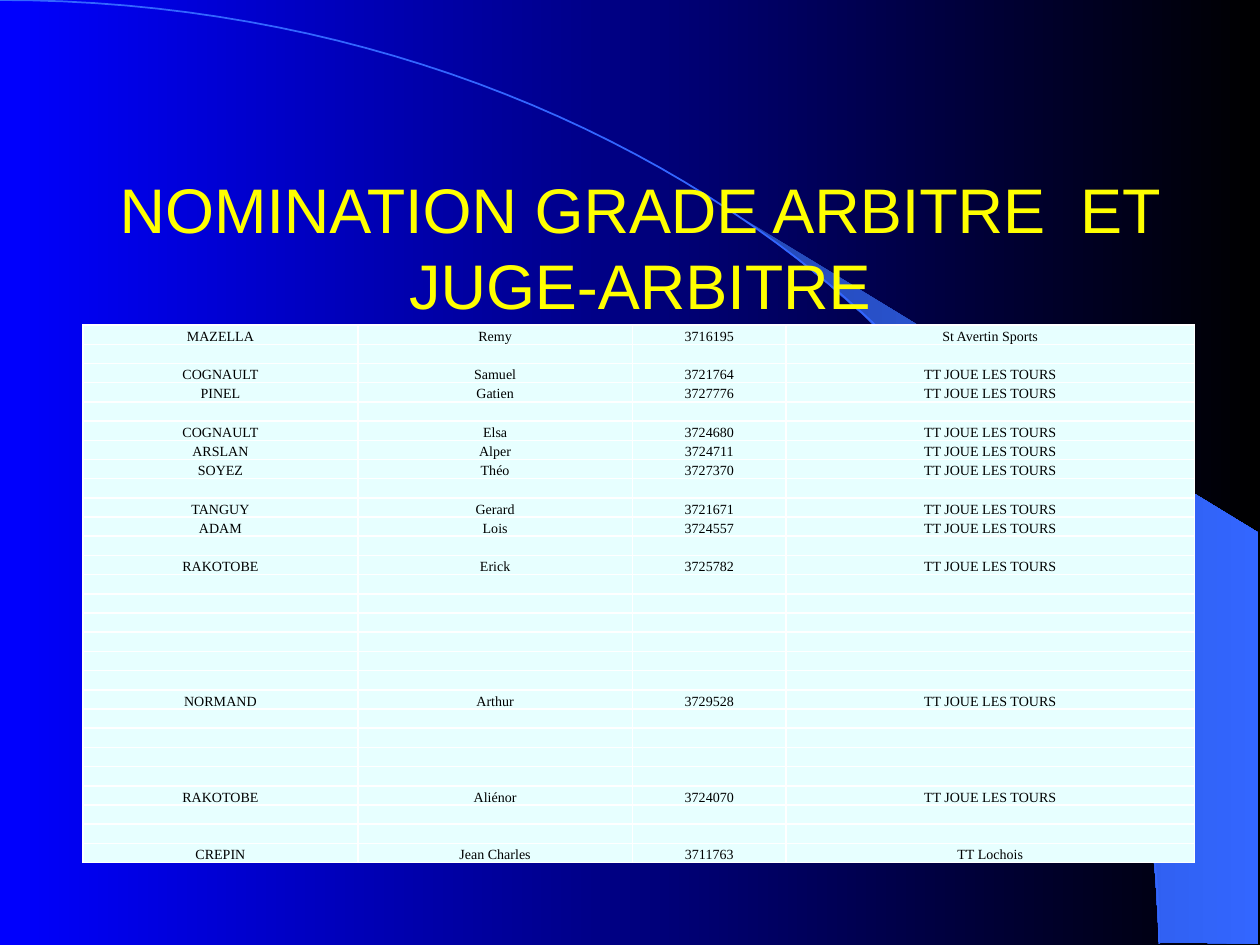
from lxml.etree import SubElement
from pptx import Presentation
from pptx.dml.color import RGBColor
from pptx.enum.text import MSO_ANCHOR as Anchor, MSO_AUTO_SIZE as AutoSize, PP_ALIGN as Align
from pptx.oxml.ns import qn
from pptx.util import Inches, Pt


def rgb(color):
    return RGBColor.from_string(color)


def write(tf, text, size, font, color):
    p = tf.paragraphs[0]
    p.alignment = Align.CENTER
    # Empty cells take the size too, so their rows stay low
    p.font.size = Pt(size)
    if text:
        r = p.add_run()
        r.text = text
        r.font.size, r.font.name = Pt(size), font
        r.font.color.rgb = rgb(color)


prs = Presentation()
prs.slide_width, prs.slide_height = Inches(10), Inches(7.5)
s = prs.slides.add_slide(prs.slide_layouts[5])

# Background and beam, both with a left-to-right gradient
beam_points = [
    (9.2, 7.48), (9.99, 7.49), (9.99, 4.23), (5.89, 1.73), (6.24, 1.99), (6.53, 2.22),
    (6.85, 2.5), (7.16, 2.8), (7.62, 3.3), (8.03, 3.84), (8.32, 4.31), (8.58, 4.79),
    (8.78, 5.28), (8.93, 5.72), (9.03, 6.09), (9.13, 6.56), (9.17, 6.96)]

# Arc: cubic curve sampled in equal steps
arc_w, arc_h, steps = 9.2, 7.49, 60
arc_points = []
for i in range(steps + 1):
    t = i / steps
    u = 1 - t
    x = 3 * u * u * t * 5.08 + (3 * u * t * t + t ** 3) * arc_w
    y = 3 * u * t * t * 3.35 + t ** 3 * arc_h
    arc_points.append((x, y))

outlines = []
for points, closed in ((beam_points, True), (arc_points, False)):
    emu = [(Inches(x), Inches(y)) for x, y in points]
    builder = s.shapes.build_freeform(*emu[0])
    builder.add_line_segments(emu[1:], close=closed)
    sp = builder.convert_to_shape()
    sp.shadow.inherit = False
    outlines.append(sp)
beam, arc = outlines
beam.line.fill.background()
arc.fill.background()
arc.line.color.rgb = rgb("3366FF")
arc.line.width = Pt(1)

for fill, colors in ((s.background.fill, ("0000FF", "000000")),
                     (beam.fill, ("2449B6", "3366FF"))):
    fill.gradient()
    fill.gradient_angle = 0
    for stop, color in zip(fill.gradient_stops, colors):
        stop.color.rgb = rgb(color)

# Title, brought in front of the arc
title = s.shapes.title
title.left, title.top, title.width, title.height = map(Inches, (0.83, 1.33, 8.5, 1.25))
tf = title.text_frame
tf.word_wrap, tf.auto_size, tf.vertical_anchor = True, AutoSize.NONE, Anchor.MIDDLE
write(tf, "NOMINATION GRADE ARBITRE  ET JUGE-ARBITRE", 36, "Arial", "FFFF00")
title.element.getparent().append(title.element)

# Table: row number -> surname, first name, licence, club
club = "TT JOUE LES TOURS"
people = {
    0: ("MAZELLA", "Remy", "3716195", "St Avertin Sports"),
    2: ("COGNAULT", "Samuel", "3721764", club),
    3: ("PINEL", "Gatien", "3727776", club),
    5: ("COGNAULT", "Elsa", "3724680", club),
    6: ("ARSLAN", "Alper", "3724711", club),
    7: ("SOYEZ", "Théo", "3727370", club),
    9: ("TANGUY", "Gerard", "3721671", club),
    10: ("ADAM", "Lois", "3724557", club),
    12: ("RAKOTOBE", "Erick", "3725782", club),
    19: ("NORMAND", "Arthur", "3729528", club),
    24: ("RAKOTOBE", "Aliénor", "3724070", club),
    27: ("CREPIN", "Jean Charles", "3711763", "TT Lochois"),
}
n_rows, widths = 28, (2.18, 2.18, 1.22, 3.24)
table = s.shapes.add_table(n_rows, len(widths), Inches(0.66), Inches(2.58),
                           Inches(sum(widths)), Inches(4.27)).table
table.first_row = table.horz_banding = False
for column, width in zip(table.columns, widths):
    column.width = Inches(width)

for i, row in enumerate(table.rows):
    for cell, text in zip(row.cells, people.get(i, [""] * len(widths))):
        cell.margin_left = cell.margin_right = cell.margin_top = Inches(0.01)
        cell.margin_bottom = 0
        cell.vertical_anchor = Anchor.BOTTOM
        tc_pr = cell._tc.get_or_add_tcPr()
        for side in ("a:lnL", "a:lnR", "a:lnT", "a:lnB"):
            ln = SubElement(tc_pr, qn(side), w=str(Pt(1)))
            SubElement(SubElement(ln, qn("a:solidFill")), qn("a:srgbClr"), val="FFFFFF")
        cell.fill.solid()
        cell.fill.fore_color.rgb = rgb("E7FFFF")
        write(cell.text_frame, text, 8, "Times New Roman", "000000")

prs.save("out.pptx")
